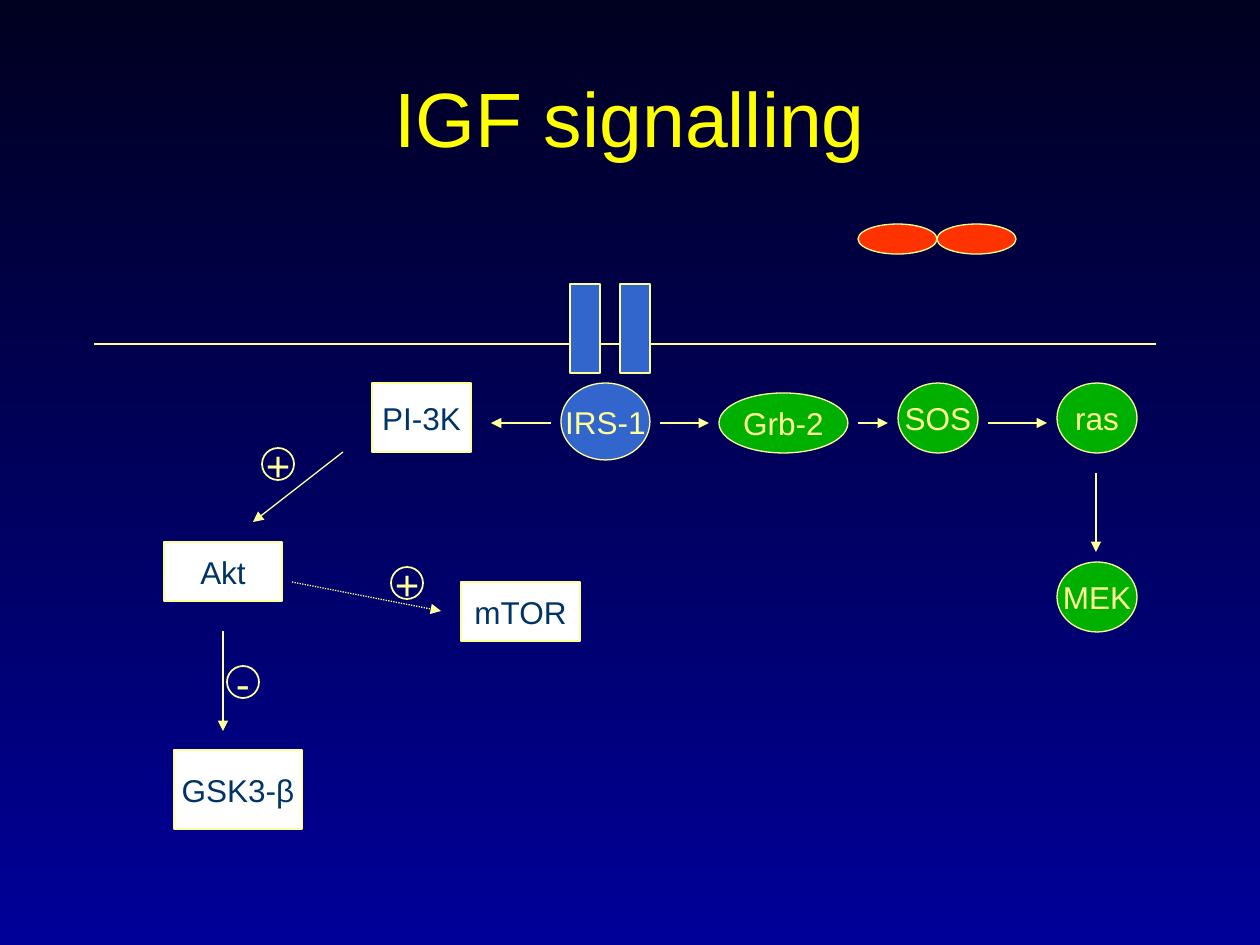
from lxml import etree
from pptx import Presentation
from pptx.dml.color import RGBColor
from pptx.enum.dml import MSO_LINE
from pptx.enum.shapes import MSO_CONNECTOR, MSO_SHAPE
from pptx.enum.text import MSO_ANCHOR, MSO_AUTO_SIZE, PP_ALIGN
from pptx.oxml.ns import qn
from pptx.util import Pt

RECT, OVAL = MSO_SHAPE.RECTANGLE, MSO_SHAPE.OVAL
LINE, DOTS = MSO_CONNECTOR.STRAIGHT, MSO_LINE.ROUND_DOT
MID, CENTER = MSO_ANCHOR.MIDDLE, PP_ALIGN.CENTER
GROW = MSO_AUTO_SIZE.SHAPE_TO_FIT_TEXT
SCALE = 914400 / 126
FONT = "Arial"
COLORS = {"top": "000020", "base": "000099", "title": "FFFF00",
          "cream": "FFFF99", "blue": "3366CC", "green": "00B000",
          "white": "FFFFFF", "navy": "003366", "red": "FF3300"}


def px(*vals):
    """Turn px lengths into EMU."""
    return [round(val * SCALE) for val in vals]


def tint(name):
    """Look up a named colour."""
    return RGBColor.from_string(COLORS[name])


def write(frame, text, size, color):
    """Put one centred line of text into a frame."""
    frame.text = text
    para = frame.paragraphs[0]
    para.alignment = CENTER
    para.font.name, para.font.size = FONT, Pt(size)
    para.font.color.rgb = tint(color)


def node(shapes, kind, box, fill=None, text="", ink="cream", width=0.75):
    """Draw an outlined shape, with a label if given."""
    shape = shapes.add_shape(kind, *px(*box))
    shape.shadow.inherit = False
    if fill:
        shape.fill.solid()
        shape.fill.fore_color.rgb = tint(fill)
    else:
        shape.fill.background()
    shape.line.color.rgb = tint("cream")
    shape.line.width = Pt(width)
    if text:
        frame = shape.text_frame
        frame.word_wrap = False
        frame.vertical_anchor = MID
        write(frame, text, 18, ink)


def link(shapes, ends, head=True, dash=None):
    """Draw a straight line, with an arrowhead by default."""
    line = shapes.add_connector(LINE, *px(*ends))
    line.line.color.rgb = tint("cream")
    line.line.width = Pt(0.75)
    if dash:
        line.line.dash_style = dash
    props = line._element.spPr
    if head:
        etree.SubElement(props.find(qn("a:ln")), qn("a:tailEnd"), type="triangle")
    etree.SubElement(props, qn("a:effectLst"))


def badge(shapes, x, y, sign, wide):
    """Draw a circled sign, centred on its circle at x, y."""
    group = shapes.add_group_shape().shapes
    label = group.add_textbox(*px(x + 16 - wide / 2, y - 15, wide, 63))
    frame = label.text_frame
    frame.word_wrap = False
    frame.auto_size = GROW
    write(frame, sign, 24, "cream")
    node(group, OVAL, (x, y, 32, 32), width=1)


def backdrop(slide):
    """Fill the background from dark at the top to blue."""
    fill = slide.background.fill
    fill.gradient()
    fill.gradient_angle = 270
    for stop, name, place in zip(fill.gradient_stops, ("top", "base"), (0, 1)):
        stop.color.rgb = tint(name)
        stop.position = place


def heading(slide, box, text):
    """Place the title."""
    title = slide.shapes.title
    title.left, title.top, title.width, title.height = px(*box)
    title.text_frame.vertical_anchor = MID
    write(title.text_frame, text, 44, "title")


def membrane(shapes, x, y, wide):
    """Draw the membrane with its receptor pair."""
    link(shapes, (x, y + 60, x + wide, y + 60), head=False)
    for left in (476, 526):
        node(shapes, RECT, (x + left, y, 30, 89), "blue")


def ligand(shapes, x, y):
    """Draw the two touching halves of the ligand."""
    for half in range(2):
        node(shapes, OVAL, (x + half * 79, y, 79, 30), "red")


def cascade(shapes, x, y):
    """Draw the path from IRS-1 through ras to MEK."""
    for text, left, top, wide, high, fill in (
            ("IRS-1", 0, 0, 89, 77, "blue"), ("Grb-2", 158, 10, 129, 60, "green"),
            ("SOS", 337, 0, 80, 70, "green"), ("ras", 496, 0, 80, 70, "green"),
            ("MEK", 496, 179, 80, 70, "green")):
        node(shapes, OVAL, (x + left, y + top, wide, high), fill, text)
    for start, end in ((99, 148), (297, 327), (427, 486)):
        link(shapes, (x + start, y + 40, x + end, y + 40))
    link(shapes, (x + 535, y + 90, x + 535, y + 169))


def kinases(shapes, x, y):
    """Draw the path from PI-3K through Akt to its targets."""
    for text, left, top, wide, high in (
            ("PI-3K", 208, 0, 99, 69), ("Akt", 0, 159, 118, 59),
            ("GSK3-β", 10, 367, 128, 79), ("mTOR", 297, 199, 119, 59)):
        node(shapes, RECT, (x + left, y + top, wide, high), "white", text, "navy")
    for x1, y1, x2, y2, dash in (
            (387, 40, 327, 40, None), (179, 69, 89, 139, None),
            (128, 199, 277, 228, DOTS), (59, 248, 59, 348, None)):
        link(shapes, (x + x1, y + y1, x + x2, y + y2), dash=dash)
    for left, top, sign, wide in ((98, 65, "+", 49), (63, 283, "-", 39),
                                  (227, 184, "+", 49)):
        badge(shapes, x + left, y + top, sign, wide)


def main():
    """Build and save the slide."""
    deck = Presentation()
    deck.slide_width, deck.slide_height = px(1260, 945)
    slide = deck.slides.add_slide(deck.slide_layouts[5])
    backdrop(slide)
    heading(slide, (63, 38, 1134, 158), "IGF signalling")
    membrane(slide.shapes, 94, 284, 1062)
    cascade(slide.shapes, 561, 383)
    kinases(slide.shapes, 164, 383)
    ligand(slide.shapes, 858, 224)
    deck.save("out.pptx")


if __name__ == "__main__":
    main()
